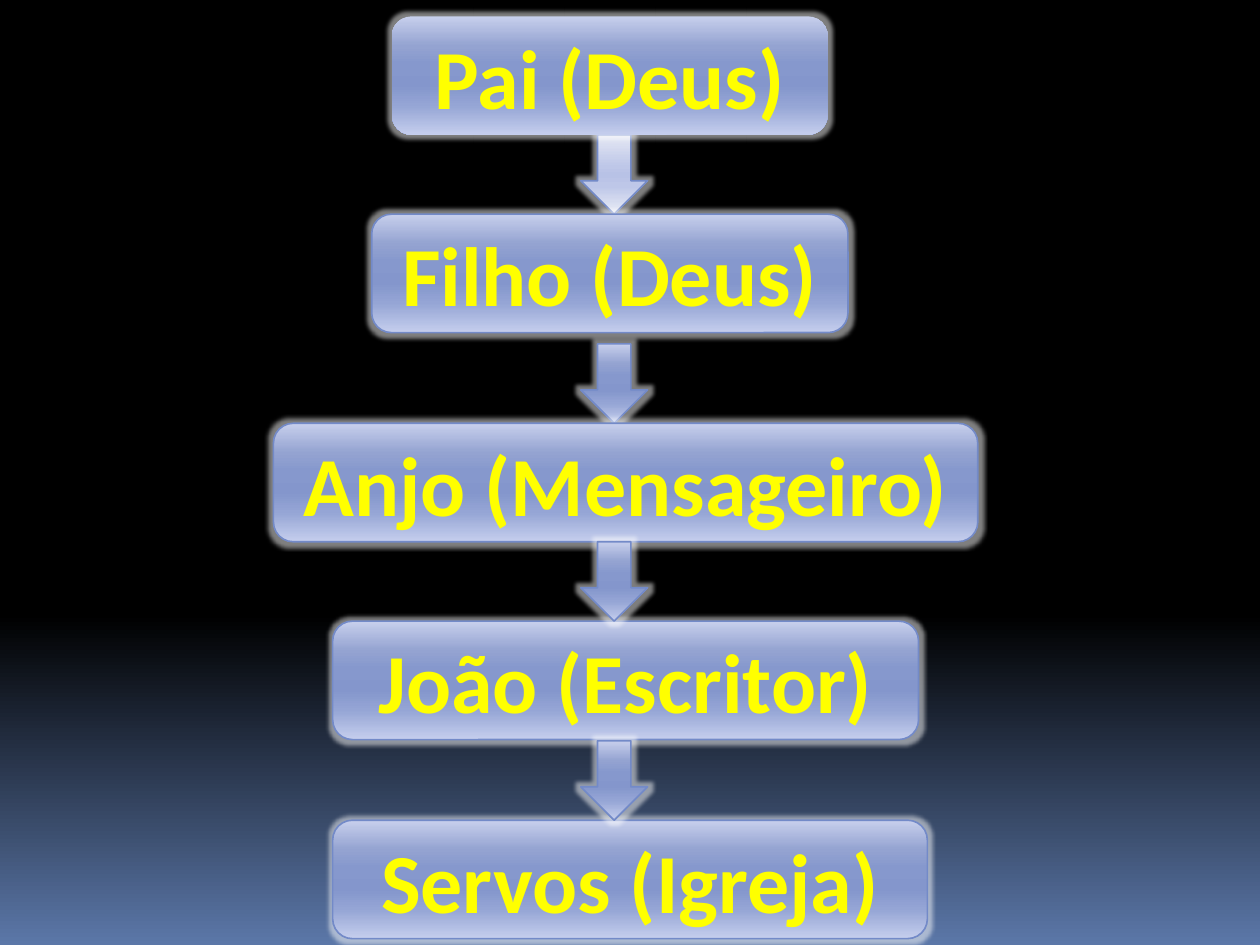
from lxml.etree import SubElement
from pptx import Presentation
from pptx.dml.color import RGBColor
from pptx.enum.shapes import MSO_SHAPE
from pptx.enum.text import MSO_ANCHOR, PP_ALIGN
from pptx.oxml.ns import qn
from pptx.util import Inches, Pt

COLORS = {"text": "FFFF00", "line": "738AC8", "glow": "FFFFFF"}
GRADIENTS = {
    "background": [(0, "000000"), (65, "000000"), (100, "5B77A8")],
    "blue": [(0, "C7CFEC"), (25, "94A3D1"), (40, "8698CD"), (50, "8496CC"),
             (60, "8698CD"), (75, "95A5D5"), (100, "C5CEED")],
    "pale": [(0, "E5E8F4"), (40, "BEC7E8"), (50, "B8C2E6"),
             (65, "BEC7E8"), (100, "EAEDF6")],
}
# text, left, top, width
STEPS = [
    ("Pai (Deus)", 3.11, 0.13, 3.46),
    ("Filho (Deus)", 2.95, 1.7, 3.78),
    ("Anjo (Mensageiro)", 2.17, 3.36, 5.59),
    ("João (Escritor)", 2.64, 4.93, 4.65),
    ("Servos (Igreja)", 2.64, 6.51, 4.72),
]
BOX_HEIGHT = 0.94
ARROW_LEFT, ARROW_WIDTH, ARROW_HEIGHT = 4.61, 0.53, 0.63
FONT = {"name": "Calibri", "size": Pt(48), "bold": True}


def fill_gradient(fill, element, stops):
    """Fill from top to bottom with (percent, colour) stops."""
    fill.gradient()
    fill.gradient_angle = 270
    stop_list = next(element.iter(qn("a:gsLst")))
    for stop in list(stop_list):
        stop_list.remove(stop)
    for percent, color in stops:
        stop = SubElement(stop_list, qn("a:gs"), pos=str(percent * 1000))
        SubElement(stop, qn("a:srgbClr"), val=color)


def add_glow(shape, radius):
    shape.shadow.inherit = False
    effects = shape.element.spPr.find(qn("a:effectLst"))
    glow = SubElement(effects, qn("a:glow"), rad=str(Pt(radius)))
    color = SubElement(glow, qn("a:srgbClr"), val=COLORS["glow"])
    SubElement(color, qn("a:alpha"), val="50000")


def add_glowing_shape(slide, kind, place, gradient, outlined=True):
    shape = slide.shapes.add_shape(kind, *map(Inches, place))
    fill_gradient(shape.fill, shape.element.spPr, GRADIENTS[gradient])
    if outlined:
        shape.line.color.rgb = RGBColor.from_string(COLORS["line"])
        shape.line.width = Pt(0.94)
    else:
        shape.line.fill.background()
    add_glow(shape, 5)
    return shape


def add_step(slide, text, left, top, width, outlined):
    box = add_glowing_shape(slide, MSO_SHAPE.ROUNDED_RECTANGLE,
                            (left, top, width, BOX_HEIGHT), "blue", outlined)
    frame = box.text_frame
    frame.word_wrap = True
    frame.vertical_anchor = MSO_ANCHOR.MIDDLE
    para = frame.paragraphs[0]
    para.alignment = PP_ALIGN.CENTER
    span = para.add_run()
    span.text = text
    for name, value in FONT.items():
        setattr(span.font, name, value)
    span.font.color.rgb = RGBColor.from_string(COLORS["text"])


def add_arrow_to(slide, box_top, gradient):
    place = (ARROW_LEFT, box_top - ARROW_HEIGHT, ARROW_WIDTH, ARROW_HEIGHT)
    add_glowing_shape(slide, MSO_SHAPE.DOWN_ARROW, place, gradient)


def main():
    deck = Presentation()
    deck.slide_width, deck.slide_height = Inches(10), Inches(7.5)
    slide = deck.slides.add_slide(deck.slide_layouts[6])
    fill_gradient(slide.background.fill, slide.element, GRADIENTS["background"])

    # The first two arrows lie behind the boxes they touch, the others in front.
    tops = [top for _, _, top, _ in STEPS]
    add_arrow_to(slide, tops[1], "pale")
    for index, step in enumerate(STEPS):
        if index == 2:
            add_arrow_to(slide, tops[index], "blue")
        add_step(slide, *step, outlined=index > 0)
        if index > 2:
            add_arrow_to(slide, tops[index], "blue")
    deck.save("out.pptx")


if __name__ == "__main__":
    main()
